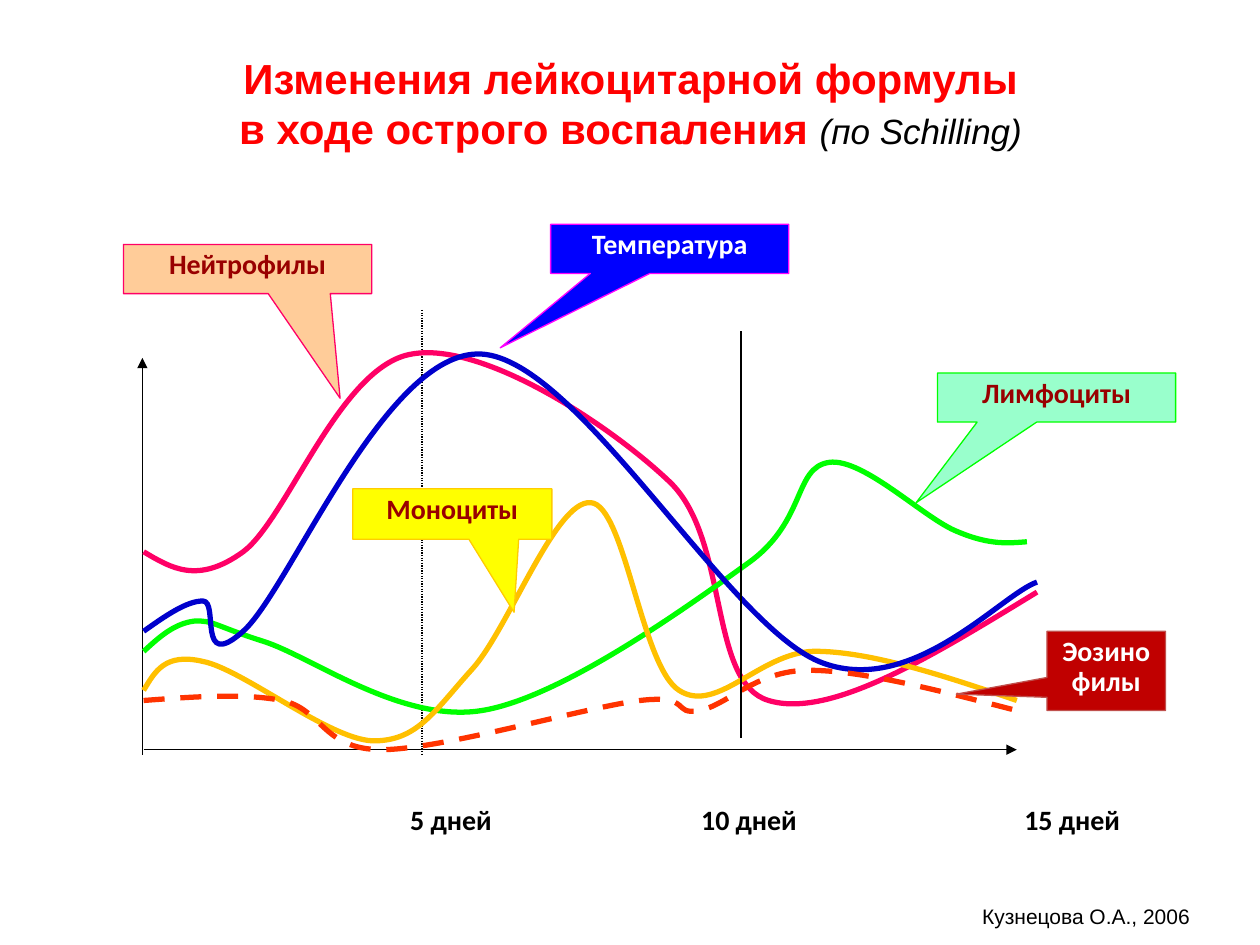
import pptx
import pptx.util
import pptx.dml.color
import pptx.enum.dml
import pptx.enum.shapes
import pptx.enum.text
import pptx.oxml
import pptx.oxml.ns

Inches = pptx.util.Inches
Pt = pptx.util.Pt
Dash = pptx.enum.dml.MSO_LINE


def color(hue):
    return pptx.dml.color.RGBColor.from_string(hue)


def stroke(line, hue, width, dash=None):
    line.color.rgb = color(hue)
    line.width = Pt(width)
    if dash:
        line.dash_style = dash


def write(shape, text, size=16, font="Calibri", hue="000000", bold=True,
          italic=False, space=None, anchor="TOP"):
    frame = shape.text_frame
    frame.word_wrap = True
    frame.vertical_anchor = getattr(pptx.enum.text.MSO_ANCHOR, anchor)
    para = frame.paragraphs[0]
    para.alignment = pptx.enum.text.PP_ALIGN.CENTER
    para.line_spacing = space
    for index, part in enumerate(text.split("\n")):
        if index:
            para.add_line_break()
        run = para.add_run()
        run.text = part
        run.font.size = Pt(size)
        run.font.name = font
        run.font.bold = bold
        run.font.italic = italic
        run.font.color.rgb = color(hue)


def label(slide, box, text, **style):
    shape = slide.shapes.add_textbox(*map(Inches, box))
    write(shape, text, **style)
    return shape


def callout(slide, box, tip, text, fill, edge, hue="990000"):
    kind = pptx.enum.shapes.MSO_SHAPE.RECTANGULAR_CALLOUT
    shape = slide.shapes.add_shape(kind, *map(Inches, box))
    shape.shadow.inherit = False
    left, top, width, height = box
    shape.adjustments[0] = (tip[0] - left) / width - 0.5
    shape.adjustments[1] = (tip[1] - top) / height - 0.5
    shape.fill.solid()
    shape.fill.fore_color.rgb = color(fill)
    stroke(shape.line, edge, 0.75)
    write(shape, text, hue=hue, space=0.9)


def rule(slide, start, end, dash=None, arrow=False):
    kind = pptx.enum.shapes.MSO_CONNECTOR.STRAIGHT
    line = slide.shapes.add_connector(kind, *map(Inches, start + end))
    stroke(line.line, "000000", 0.75, dash)
    if arrow:
        tail = pptx.oxml.ns.qn("a:tailEnd")
        line.line._get_or_add_ln().makeelement
        node = line.line._get_or_add_ln()
        node.append(node.makeelement(tail, {"type": "triangle"}))
    props = line._element.spPr
    props.append(props.makeelement(pptx.oxml.ns.qn("a:effectLst"), {}))


def curve(slide, points, hue, dash=None):
    spots = [(Inches(x), Inches(y)) for x, y in points]
    form = slide.shapes.build_freeform(*spots[0])
    form.add_line_segments(spots[1:], close=False)
    shape = form.convert_to_shape()
    shape.shadow.inherit = False
    shape.fill.background()
    stroke(shape.line, hue, 3, dash)
    name = pptx.oxml.ns.qn
    trace = next(shape._element.iter(name("a:path")))
    steps = trace.findall(name("a:lnTo"))
    for first in range(0, len(steps), 3):
        bend = trace.makeelement(name("a:cubicBezTo"), {})
        trace.append(bend)
        for step in steps[first:first + 3]:
            bend.append(step[0])
            trace.remove(step)


def main():
    deck = pptx.Presentation()
    deck.slide_width = Inches(10)
    deck.slide_height = Inches(7.5)
    slide = deck.slides.add_slide(deck.slide_layouts[6])

    title = label(slide, (0.35, 0.36, 9.31, 0.91),
                  "Изменения лейкоцитaрной формулы\nв ходе острого воспаления ",
                  size=24, font="Arial", hue="FF0000", anchor="MIDDLE")
    write(title, "(по Schilling)", size=20, font="Arial", bold=False,
          italic=True, anchor="MIDDLE")

    rule(slide, (1.14, 5.95), (8.07, 5.95), arrow=True)
    rule(slide, (1.13, 5.99), (1.13, 2.84), arrow=True)
    rule(slide, (3.35, 2.46), (3.35, 6), dash=Dash.ROUND_DOT)
    for left, width, text in ((2.95, 1.26, "5 дней"), (5.16, 1.57, "10 дней"),
                              (7.84, 1.34, "15 дней")):
        label(slide, (left, 6.35, width, 0.39), text, space=0.9)

    callout(slide, (0.98, 1.94, 1.97, 0.39), (2.7, 3.16), "Нейтрофилы",
            "FFCC99", "FF0066")
    curve(slide, [
        (1.14, 4.38), (1.36, 4.51), (1.57, 4.64), (1.93, 4.38),
        (2.28, 4.12), (2.7, 2.9), (3.27, 2.81),
        (3.83, 2.71), (4.84, 3.37), (5.32, 3.83),
        (5.79, 4.29), (5.62, 5.42), (6.1, 5.56),
        (6.59, 5.71), (7.41, 5.2), (8.23, 4.7)], "FF0066")
    curve(slide, [
        (1.14, 5.17), (1.26, 5.06), (1.38, 4.95), (1.54, 4.93),
        (1.69, 4.92), (1.71, 4.97), (2.09, 5.09),
        (2.47, 5.21), (3.18, 5.74), (3.82, 5.64),
        (4.46, 5.54), (5.49, 4.79), (5.95, 4.46),
        (6.4, 4.13), (6.3, 3.71), (6.58, 3.67),
        (6.85, 3.63), (7.34, 4.12), (7.6, 4.22),
        (7.86, 4.33), (8.01, 4.31), (8.15, 4.3)], "00FF00")
    callout(slide, (7.44, 2.96, 1.89, 0.39), (7.27, 3.99), "Лимфоциты",
            "99FFCC", "00FF00")
    curve(slide, [
        (1.14, 5.48), (1.23, 5.33), (1.31, 5.18), (1.61, 5.25),
        (1.92, 5.31), (2.6, 5.86), (2.95, 5.88),
        (3.31, 5.89), (3.45, 5.64), (3.74, 5.32),
        (4.03, 5.01), (4.41, 3.96), (4.69, 3.99),
        (4.96, 4.01), (5.09, 5.29), (5.39, 5.48),
        (5.7, 5.68), (6.05, 5.15), (6.5, 5.17),
        (6.94, 5.18), (7.51, 5.37), (8.07, 5.56)], "FFC000")
    callout(slide, (2.8, 3.88, 1.58, 0.4), (4.08, 4.86), "Моноциты",
            "FFFF00", "FFCC00")
    callout(slide, (4.37, 1.78, 1.89, 0.39), (3.97, 2.76), "Температура",
            "0000FF", "FF00FF", "FFFFFF")
    curve(slide, [
        (1.14, 5.01), (1.31, 4.89), (1.48, 4.77), (1.61, 4.77),
        (1.74, 4.77), (1.56, 5.34), (1.93, 5.01),
        (2.3, 4.68), (3.06, 2.77), (3.82, 2.81),
        (4.58, 2.85), (5.76, 4.94), (6.5, 5.25),
        (7.23, 5.55), (7.94, 4.72), (8.23, 4.62)], "0000CC")
    curve(slide, [
        (1.14, 5.56), (1.54, 5.53), (1.93, 5.5), (2.24, 5.56),
        (2.56, 5.63), (2.56, 5.95), (3.03, 5.95),
        (3.5, 5.95), (4.66, 5.61), (5.08, 5.56),
        (5.5, 5.51), (5.33, 5.68), (5.55, 5.64),
        (5.77, 5.6), (6, 5.32), (6.42, 5.32),
        (6.84, 5.32), (7.45, 5.48), (8.07, 5.64)], "FF3300", Dash.DASH)
    callout(slide, (8.31, 5.01, 0.94, 0.63), (7.59, 5.51), "Эозинофилы",
            "C00000", "C0504D", "FFFFFF")
    rule(slide, (5.88, 2.63), (5.88, 5.86))
    label(slide, (7.36, 7.12, 2.52, 0.3), "Кузнецова О.А., 2006",
          size=12, font="Arial", bold=False)
    deck.save("out.pptx")


if __name__ == "__main__":
    main()
